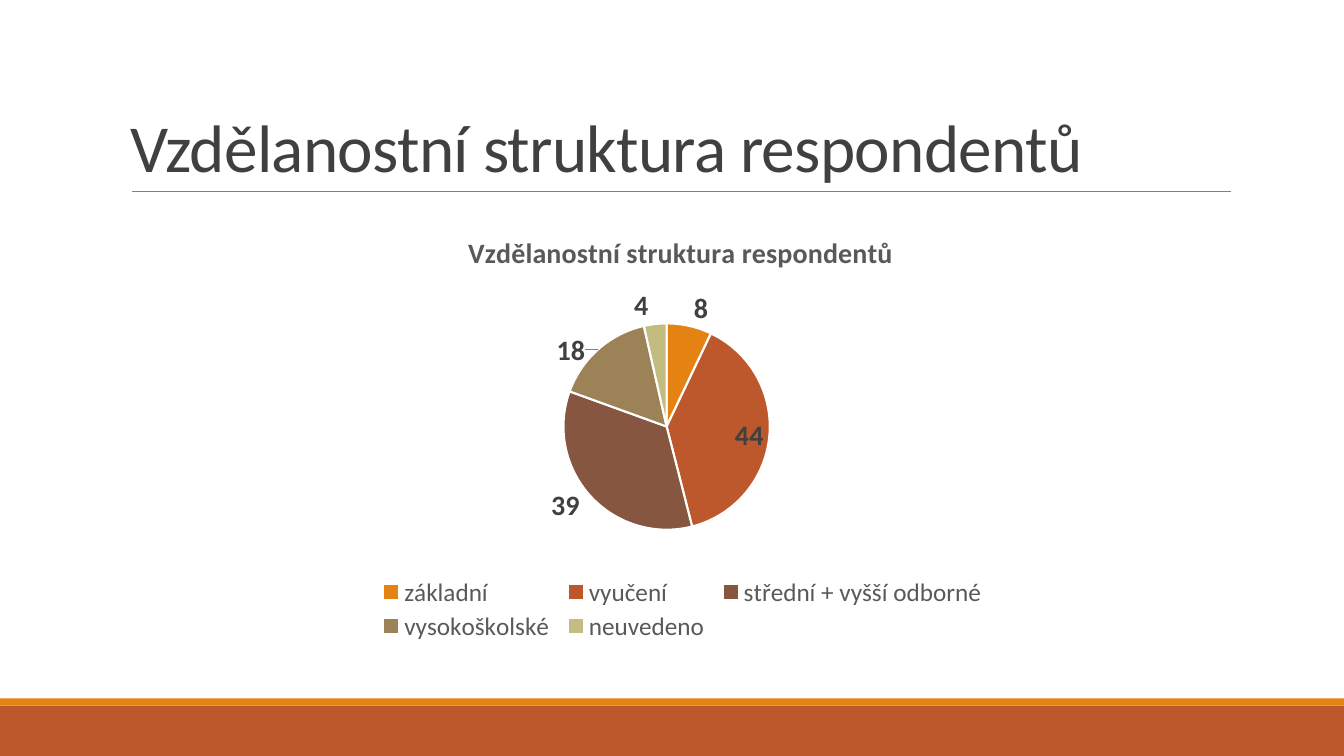
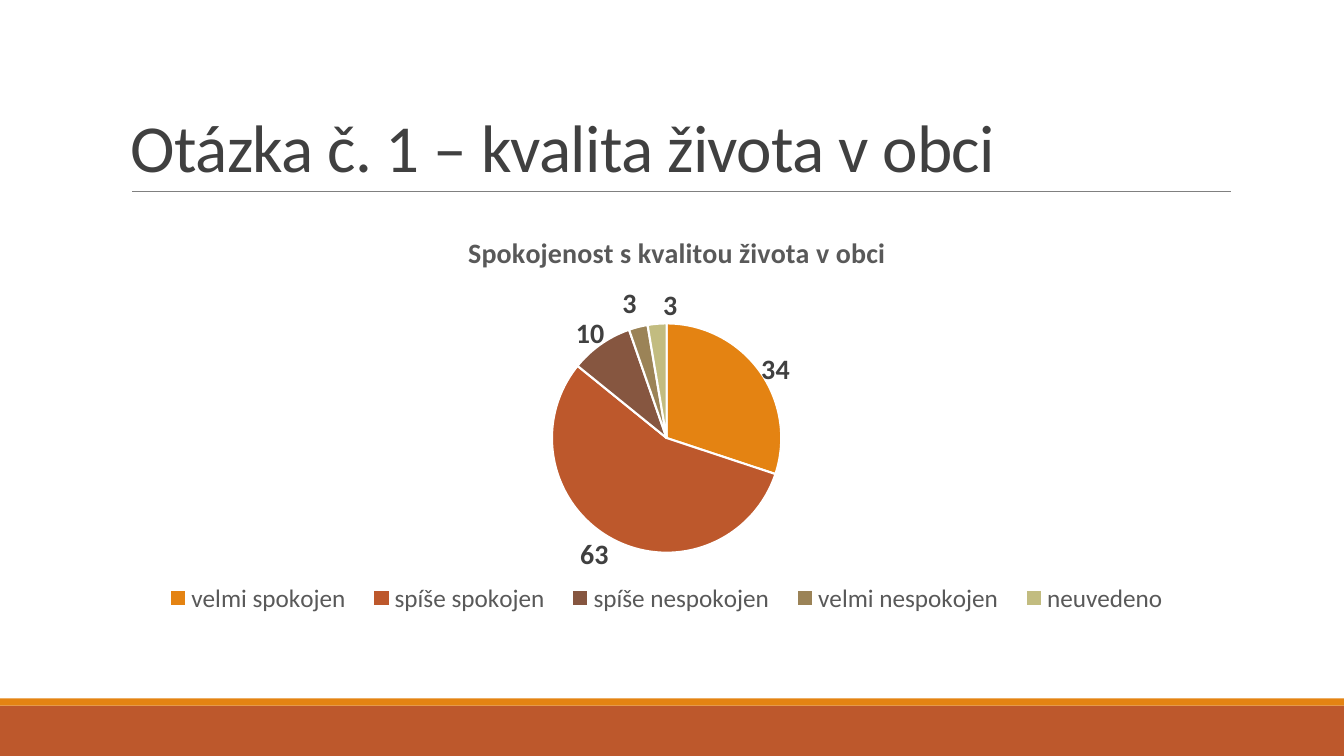
from dataclasses import dataclass
from typing import Optional

import pptx
import pptx.chart.data
import pptx.dml.color
import pptx.enum.chart
import pptx.enum.shapes
import pptx.enum.text
import pptx.oxml
import pptx.oxml.ns
import pptx.util
from pptx.util import Cm

RGBColor = pptx.dml.color.RGBColor
ORANGE = RGBColor(0xE4, 0x83, 0x12)
RUST = RGBColor(0xBD, 0x58, 0x2C)
BROWN = RGBColor(0x86, 0x56, 0x40)
KHAKI = RGBColor(0x9B, 0x83, 0x57)
SAGE = RGBColor(0xC2, 0xBC, 0x80)
WHITE = RGBColor(0xFF, 0xFF, 0xFF)
DARK = RGBColor(0x40, 0x40, 0x40)
MID = RGBColor(0x59, 0x59, 0x59)
RULE = RGBColor(0x80, 0x80, 0x80)
SLICE_COLORS = (ORANGE, RUST, BROWN, KHAKI, SAGE)

FONT = "Calibri"
SLIDE_W, SLIDE_H = Cm(33.87), Cm(19.05)
CONTENT_X, CONTENT_W = Cm(3.05), Cm(27.94)
CHART_Y, CHART_H = Cm(5.13), Cm(11.18)
PIE_X, PIE_TOP = Cm(13.75), Cm(3.02)


@dataclass(frozen=True)
class Box:
    """An area in centimetres, measured from the chart's corner."""
    x: float
    y: float
    w: float
    h: float


@dataclass(frozen=True)
class Slice:
    name: str
    value: int
    label_shift: Optional[tuple[float, float]] = None  # centimetres


@dataclass(frozen=True)
class PieSlide:
    title: str
    chart_title: str
    radius: float
    legend: Box
    slices: tuple[Slice, ...]


SLIDES = (
    PieSlide(
        "Vzdělanostní struktura respondentů",
        "Vzdělanostní struktura respondentů",
        2.6,
        Box(6.35, 9.32, 15.6, 1.8),
        (
            Slice("základní", 8, (0.08, 0.15)),
            Slice("vyučení", 44),
            Slice("střední + vyšší odborné", 39, (-0.15, -0.3)),
            Slice("vysokoškolské", 18, (-0.23, 0.58)),
            Slice("neuvedeno", 4, (-0.15, 0.13)),
        ),
    ),
    PieSlide(
        "Otázka č. 1 – kvalita života v obci",
        "Spokojenost s kvalitou života v obci",
        2.89,
        Box(0.75, 9.4, 26, 1.1),
        (
            Slice("velmi spokojen", 34, (-0.08, 0.5)),
            Slice("spíše spokojen", 63, (0, -0.18)),
            Slice("spíše nespokojen", 10, (0.18, 0.3)),
            Slice("velmi nespokojen", 3),
            Slice("neuvedeno", 3, (0.35, 0.13)),
        ),
    ),
)


def set_font(font, size: float, color: RGBColor, bold: bool = False) -> None:
    font.name = FONT
    font.size = pptx.util.Pt(size)
    font.bold = bold
    font.color.rgb = color


def write(tf, text: str, *, size: float, color: RGBColor, bold: bool = False,
          line_spacing: Optional[float] = None, tracking: float = 0) -> None:
    p = tf.paragraphs[0]
    if line_spacing:
        p.line_spacing = line_spacing
    r = p.add_run()
    r.text = text
    set_font(r.font, size, color, bold)
    if tracking:
        r.font._element.set("spc", str(round(tracking * 100)))


def add_band(s, y: int, h: int, color: RGBColor) -> None:
    sp = s.shapes.add_shape(
        pptx.enum.shapes.MSO_SHAPE.RECTANGLE, 0, y, SLIDE_W, h)
    sp.shadow.inherit = False
    sp.fill.solid()
    sp.fill.fore_color.rgb = color
    sp.line.fill.background()


def add_frame(s, title: str) -> None:
    """Draw the bands, the rule and the title that all slides share."""
    add_band(s, Cm(17.78), Cm(1.27), RUST)
    add_band(s, Cm(17.6), Cm(0.18), ORANGE)

    y = Cm(4.83)
    rule = s.shapes.add_connector(
        pptx.enum.shapes.MSO_CONNECTOR.STRAIGHT, Cm(3.33), y, Cm(31.01), y)
    rule.line.color.rgb = RULE
    rule.line.width = pptx.util.Pt(0.5)
    rule._element.spPr.append(pptx.oxml.parse_xml(
        f"<a:effectLst {pptx.oxml.ns.nsdecls('a')}/>"))

    tf = s.shapes.add_textbox(
        CONTENT_X, Cm(0.79), CONTENT_W, Cm(4.04)).text_frame
    tf.word_wrap = True
    tf.vertical_anchor = pptx.enum.text.MSO_ANCHOR.BOTTOM
    write(tf, title, size=48, color=DARK, line_spacing=0.85, tracking=-0.5)


def set_layout(parent, index: int, x: int, y: int,
               size: Optional[tuple[int, int]] = None,
               *, edge: bool = True, inner: bool = False) -> None:
    """Place a chart part; without edge, x and y shift it from its default."""
    for old in parent.findall(pptx.oxml.ns.qn("c:layout")):
        parent.remove(old)
    items = [("layoutTarget", "inner")] if inner else []
    if edge:
        items += [("xMode", "edge"), ("yMode", "edge")]
    items += [("x", x / CONTENT_W), ("y", y / CHART_H)]
    if size:
        items += [("w", size[0] / CONTENT_W), ("h", size[1] / CHART_H)]
    body = "".join(f'<c:{tag} val="{val}"/>' for tag, val in items)
    parent.insert(index, pptx.oxml.parse_xml(
        f"<c:layout {pptx.oxml.ns.nsdecls('c')}>"
        f"<c:manualLayout>{body}</c:manualLayout></c:layout>"))


def format_slices(series, slices: tuple[Slice, ...]) -> None:
    best_fit = pptx.enum.chart.XL_LABEL_POSITION.BEST_FIT
    labels = series.data_labels
    labels.show_value = True
    labels.position = best_fit
    set_font(labels.font, 20, DARK, bold=True)
    labels._element.append(pptx.oxml.parse_xml(
        f"<c:leaderLines {pptx.oxml.ns.nsdecls('c', 'a')}><c:spPr>"
        f'<a:ln w="9525"><a:solidFill><a:srgbClr val="{RULE}"/></a:solidFill>'
        "</a:ln></c:spPr></c:leaderLines>"))

    for i, (item, color) in enumerate(zip(slices, SLICE_COLORS)):
        point = series.points[i]
        point.format.fill.solid()
        point.format.fill.fore_color.rgb = color
        point.format.line.color.rgb = WHITE
        point.format.line.width = pptx.util.Pt(1.5)
        if item.label_shift:
            label = point.data_label
            set_font(label.font, 20, DARK, bold=True)
            label.position = best_fit
            dx, dy = item.label_shift
            set_layout(label._get_or_add_dLbl(), 1, Cm(dx), Cm(dy), edge=False)


def add_pie(s, content: PieSlide) -> None:
    data = pptx.chart.data.CategoryChartData()
    data.categories = [item.name for item in content.slices]
    data.add_series("Series 1", [item.value for item in content.slices])
    chart = s.shapes.add_chart(
        pptx.enum.chart.XL_CHART_TYPE.PIE,
        CONTENT_X, CHART_Y, CONTENT_W, CHART_H, data).chart
    chart.font.name = FONT
    chart.font.size = pptx.util.Pt(10)

    chart.has_title = True
    write(chart.chart_title.text_frame, content.chart_title,
          size=20, color=MID, bold=True)
    set_layout(chart.chart_title._element, 1, Cm(8.62), Cm(0.6))

    chart.has_legend = True
    legend, box = chart.legend, content.legend
    legend.position = pptx.enum.chart.XL_LEGEND_POSITION.BOTTOM
    legend.include_in_layout = False
    set_font(legend.font, 18, MID)
    set_layout(legend._element, 1, Cm(box.x), Cm(box.y),
               (Cm(box.w), Cm(box.h)))

    radius = Cm(content.radius)
    set_layout(chart._chartSpace.chart.plotArea, 0, PIE_X - radius, PIE_TOP,
               (2 * radius, 2 * radius), inner=True)
    plot = chart.plots[0]
    plot.vary_by_categories = True
    format_slices(plot.series[0], content.slices)


def main() -> None:
    prs = pptx.Presentation()
    prs.slide_width, prs.slide_height = SLIDE_W, SLIDE_H
    for content in SLIDES:
        s = prs.slides.add_slide(prs.slide_layouts[6])
        add_frame(s, content.title)
        add_pie(s, content)
    prs.save("out.pptx")


if __name__ == "__main__":
    main()
